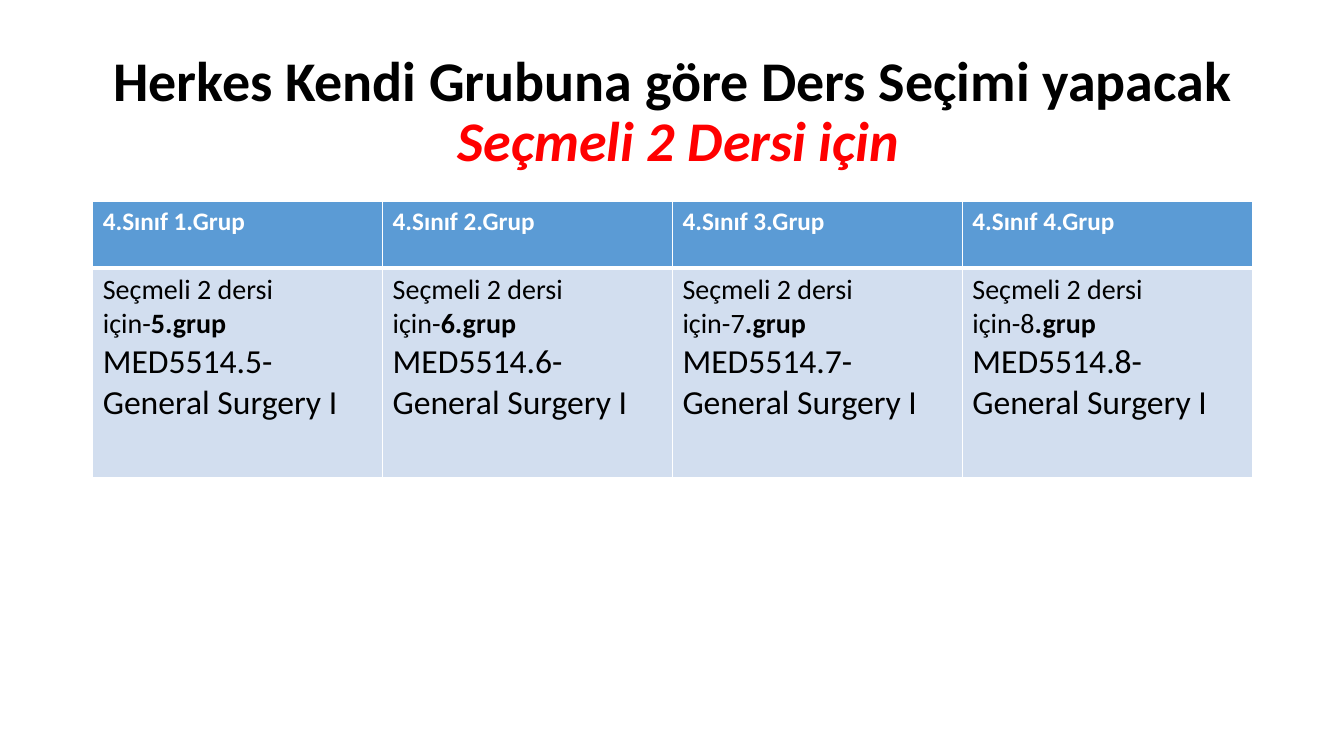
from lxml import etree
from pptx import Presentation
from pptx.dml.color import RGBColor
from pptx.enum.text import MSO_ANCHOR, PP_ALIGN
from pptx.oxml.ns import qn
from pptx.util import Inches, Pt

CENTER = PP_ALIGN.CENTER
MIDDLE = MSO_ANCHOR.MIDDLE
FACE = "Calibri"
WHITE, BLACK, RED = "FFFFFF", "000000", "FF0000"
BLUE, PALE = "5B9BD5", "D2DEEF"
GROUPS = [
    ("4.Sınıf 1.Grup", "", "5.grup", "MED5514.5-General Surgery I"),
    ("4.Sınıf 2.Grup", "", "6.grup", "MED5514.6-General Surgery I"),
    ("4.Sınıf 3.Grup", "7", ".grup", "MED5514.7-General Surgery I"),
    ("4.Sınıf 4.Grup", "8", ".grup", "MED5514.8-General Surgery I"),
]


def paint(target, color):
    target.rgb = RGBColor.from_string(color)


def style(font, size, color, bold=None):
    font.name = FACE
    font.size = Pt(size)
    font.bold = bold
    paint(font.color, color)


def add_run(para, text, bold=None):
    run = para.add_run()
    run.text = text
    run.font.bold = bold
    return run


def set_cell(cell, color, top, bottom):
    props = cell._tc.get_or_add_tcPr()
    for side, width in (("L", 1), ("R", 1), ("T", top), ("B", bottom)):
        line = etree.SubElement(props, qn(f"a:ln{side}"), w=str(Pt(width)))
        fill = etree.SubElement(line, qn("a:solidFill"))
        etree.SubElement(fill, qn("a:srgbClr"), val=WHITE)
    cell.fill.solid()
    paint(cell.fill.fore_color, color)


def add_title(slide, left, top, width, height):
    frame = slide.shapes.add_textbox(left, top, width, height).text_frame
    frame.word_wrap = True
    frame.vertical_anchor = MIDDLE
    para = frame.paragraphs[0]
    para.alignment = CENTER
    para.line_spacing = 0.9
    style(para.font, 40, BLACK, True)
    add_run(para, "Herkes Kendi Grubuna göre Ders Seçimi yapacak")
    para.add_line_break()
    add_run(para, " ").font.size = Pt(36)
    topic = add_run(para, "Seçmeli 2 Dersi için")
    topic.font.italic = True
    paint(topic.font.color, RED)


def add_groups(slide, left, top, width, height):
    count = len(GROUPS)
    table = slide.shapes.add_table(2, count, left, top, width, height).table
    for col in table.columns:
        col.width = width // count
    table.rows[0].height = int(height * 0.24)
    table.rows[1].height = height - table.rows[0].height
    for col, (name, digit, group, course) in enumerate(GROUPS):
        head, body = table.cell(0, col), table.cell(1, col)
        set_cell(head, BLUE, 1, 3)
        set_cell(body, PALE, 3, 1)
        para = head.text_frame.paragraphs[0]
        style(para.font, 18, WHITE, True)
        add_run(para, name)
        para = body.text_frame.paragraphs[0]
        style(para.font, 20, BLACK)
        add_run(para, "Seçmeli 2 dersi için-" + digit, False)
        add_run(para, group, True)
        para = body.text_frame.add_paragraph()
        style(para.font, 24, BLACK, False)
        add_run(para, course)


def main():
    deck = Presentation()
    deck.slide_width = Inches(13.33)
    deck.slide_height = Inches(7.5)
    slide = deck.slides.add_slide(deck.slide_layouts[6])
    left, width = Inches(0.92), Inches(11.5)
    add_title(slide, left, Inches(0.4), width, Inches(1.45))
    add_groups(slide, left, Inches(2), width, Inches(2.74))
    deck.save("out.pptx")


if __name__ == "__main__":
    main()
